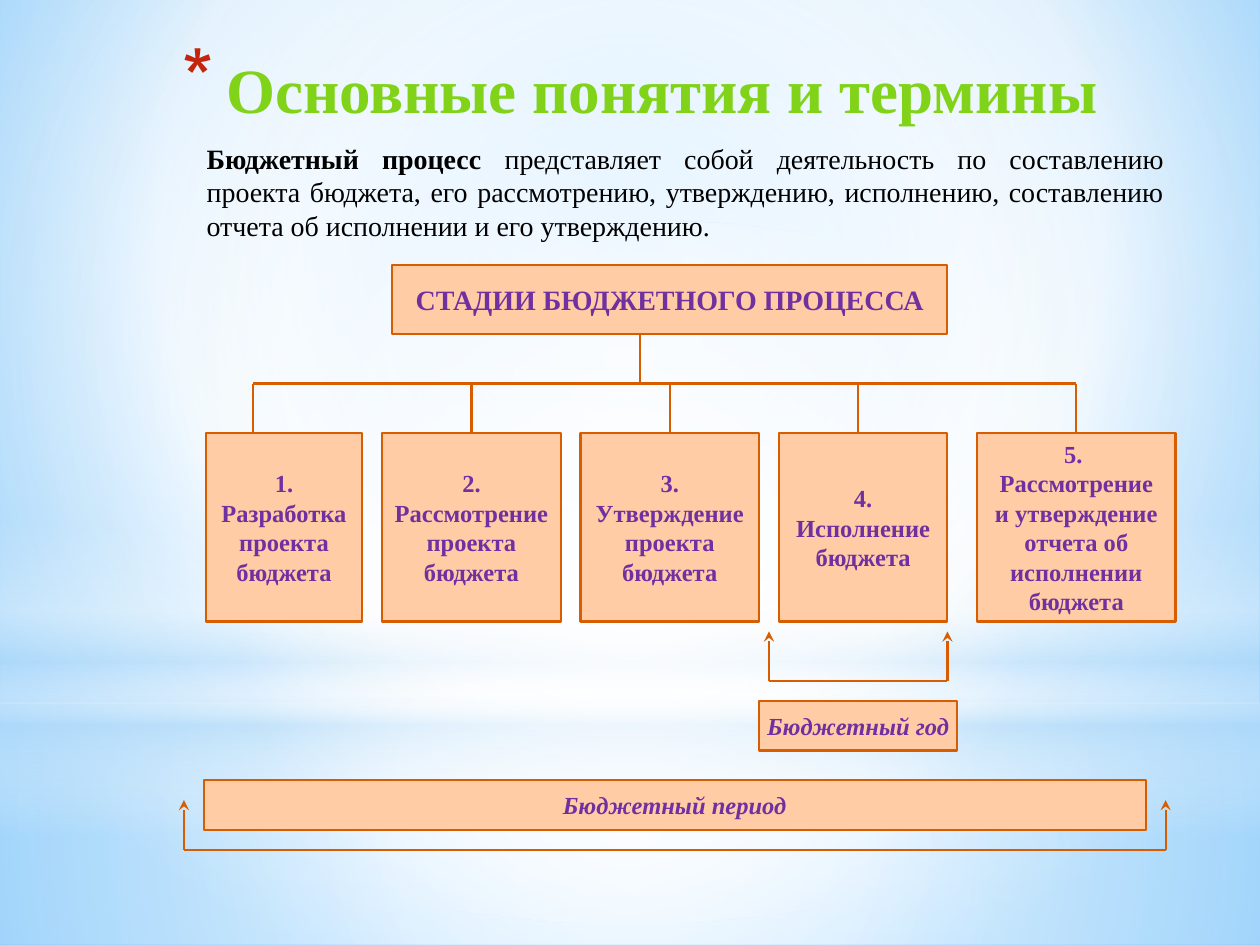
import pptx
import pptx.util
import pptx.dml.color
import pptx.enum.shapes
import pptx.enum.text
import pptx.oxml
import pptx.oxml.ns
from typing import NamedTuple

WIDE, HIGH = 10, 7.5
LEFT, TOP, CELL = 1.46, 2.1, 0.0787  # origin and step of the chart grid
FACE = "Times New Roman"
PEACH, RUST, PLUM, LIME, RED = "FFCCA6", "D85C00", "7030A0", "81D31A", "C3260C"
WHITE, SKY = "FFFFFF", "B4DCFA"
BUS = 12  # grid row of the line that joins the stages
ALIGN = pptx.enum.text.PP_ALIGN
ANCHOR = pptx.enum.text.MSO_ANCHOR
KIND = pptx.enum.shapes.MSO_SHAPE
qn = pptx.oxml.ns.qn


class Stage(NamedTuple):
    col: float
    span: float
    drop: float
    text: str


class Span(NamedTuple):
    """A labelled box and the bracket with two arrows beside it."""
    text: str
    col: float
    row: float
    span: float
    start: float
    end: float
    base: float


class Glow(NamedTuple):
    """A soft backdrop shape; top and height are shares of the slide."""
    kind: int
    top: float
    high: float
    stops: tuple
    mode: str


CIRCLE = '<a:path path="circle"><a:fillToRect l="{}" t="{}" r="{}" b="{}"/></a:path>'
MID = CIRCLE.format(*[50000] * 4)
DOWN = '<a:lin ang="5400000" scaled="0"/>'

GLOWS = [
    Glow(KIND.RECTANGLE, 0.744, 0.256,
         ((0, WHITE, 91), (37, WHITE, 76), (100, SKY, 79)), MID),
    Glow(KIND.RECTANGLE, 0, 0.744,
         ((0, WHITE, 89), (48, WHITE, 62), (100, SKY, 79)), MID),
    Glow(KIND.RECTANGLE, 0.55, 0.333,
         ((0, WHITE, 0), (29, WHITE, 30), (45, SKY, 40),
          (55, WHITE, 26), (65, SKY, 60), (100, WHITE, 0)), DOWN),
    Glow(KIND.OVAL, 0.233, 0.744, ((0, WHITE, 100), (56, WHITE, 0)), MID),
]
STAGES = [
    Stage(2.2, 15.8, 7, "1. Разработка проекта бюджета"),
    Stage(20, 18, 29, "2. Рассмотрение проекта бюджета"),
    Stage(40, 18, 49, "3. Утверждение проекта бюджета"),
    Stage(60, 17, 68, "4. Исполнение бюджета"),
    Stage(80, 20, 90, "5. \nРассмотрение и утверждение отчета об исполнении бюджета"),
]
SPANS = [
    Span("Бюджетный год", 58, 44, 20, 59, 77, 42),
    Span("Бюджетный период", 2, 52, 95, 0, 99, 59),
]


def paint(code: str) -> pptx.dml.color.RGBColor:
    return pptx.dml.color.RGBColor.from_string(code)


def node(tag: str, inner: str = "", **attrs: str):
    """Make a DrawingML element."""
    pairs = " ".join(f'{name}="{value}"' for name, value in attrs.items())
    return pptx.oxml.parse_xml(
        f'<a:{tag} {pptx.oxml.ns.nsdecls("a")} {pairs}>{inner}</a:{tag}>')


def blend(props, stops: tuple, mode: str) -> None:
    """Swap a solid fill for a gradient of (percent, colour, opacity) stops."""
    marks = "".join(
        f'<a:gs pos="{at * 1000}"><a:srgbClr val="{code}">'
        f'<a:alpha val="{seen * 1000}"/></a:srgbClr></a:gs>'
        for at, code, seen in stops)
    props.replace(props.find(qn("a:solidFill")),
                  node("gradFill", f"<a:gsLst>{marks}</a:gsLst>{mode}", rotWithShape="1"))


def back(slide) -> None:
    slide.background.fill.solid()
    blend(slide.element.find(".//" + qn("p:bgPr")),
          ((0, "9ED5FF", 100), (60, WHITE, 100), (100, "5BB9FF", 100)),
          CIRCLE.format(20000, 10000, 20000, 60000))


def glow(slide, part: Glow) -> None:
    shape = slide.shapes.add_shape(
        part.kind, 0, pptx.util.Inches(part.top * HIGH),
        pptx.util.Inches(WIDE), pptx.util.Inches(part.high * HIGH))
    shape.shadow.inherit = False
    shape.line.fill.background()
    shape.fill.solid()
    blend(shape.element.spPr, part.stops, part.mode)


def write(shape, text: str, *, size: float = 14, color: str = PLUM,
          bold: bool = True, slant: bool = False, align=ALIGN.CENTER,
          anchor=ANCHOR.MIDDLE, wrap: bool = True, lead: str = "") -> None:
    """Fill a shape with text; lead is a bold opening run."""
    frame = shape.text_frame
    frame.text = text
    frame.auto_size = pptx.enum.text.MSO_AUTO_SIZE.NONE
    frame.word_wrap = wrap
    frame.vertical_anchor = anchor
    if lead:
        first = frame.paragraphs[0]
        first.runs[0].text = lead
        first.add_run().text = text
    for para in frame.paragraphs:
        para.alignment = align
        para.space_before = pptx.util.Pt(0)
        for run in para.runs:
            font = run.font
            font.name, font.size = FACE, pptx.util.Pt(size)
            font.bold, font.italic = bold or run.text == lead, slant
            font.color.rgb = paint(color)


def mark(shape, dent: float, *bullet) -> None:
    """Set the hanging indent and the bullet of the first paragraph."""
    props = shape.text_frame.paragraphs[0]._p.get_or_add_pPr()
    gap = pptx.util.Inches(dent)
    props.set("marL", str(gap))
    props.set("indent", str(-gap))
    props.extend(bullet)


def place(shape, left: float, top: float, wide: float, high: float) -> None:
    """Move a placeholder, by shares of the slide, and bring it to the front."""
    shape.left, shape.width = (pptx.util.Inches(n * WIDE) for n in (left, wide))
    shape.top, shape.height = (pptx.util.Inches(n * HIGH) for n in (top, high))
    shape.element.getparent().append(shape.element)


def spot(col: float, row: float) -> tuple:
    return pptx.util.Inches(LEFT + col * CELL), pptx.util.Inches(TOP + row * CELL)


def box(slide, col: float, row: float, span: float, rows: float,
        text: str, **style) -> None:
    shape = slide.shapes.add_shape(
        KIND.RECTANGLE, *spot(col, row),
        pptx.util.Inches(span * CELL), pptx.util.Inches(rows * CELL))
    shape.shadow.inherit = False
    shape.fill.solid()
    shape.fill.fore_color.rgb = paint(PEACH)
    shape.line.color.rgb = paint(RUST)
    shape.line.width = pptx.util.Pt(1.25)
    write(shape, text, **style)


def wire(slide, start: tuple, end: tuple, arrow: bool = False) -> None:
    link = slide.shapes.add_connector(
        pptx.enum.shapes.MSO_CONNECTOR.STRAIGHT, *spot(*start), *spot(*end))
    link.line.color.rgb = paint(RUST)
    link.line.width = pptx.util.Pt(1.25)
    props = link.element.spPr
    if arrow:
        props.find(qn("a:ln")).append(node("tailEnd", type="stealth"))
    props.append(node("effectLst"))


def main() -> None:
    deck = pptx.Presentation()
    deck.slide_width = pptx.util.Inches(WIDE)
    deck.slide_height = pptx.util.Inches(HIGH)
    slide = deck.slides.add_slide(deck.slide_layouts[1])
    title, body = slide.placeholders
    back(slide)
    for part in GLOWS:
        glow(slide, part)

    place(body, 0.154, 0.143, 0.78, 0.105)
    write(body, "представляет собой деятельность по составлению проекта бюджета, "
          "его рассмотрению, утверждению, исполнению, составлению отчета "
          "об исполнении и его утверждению.", lead="Бюджетный процесс ",
          size=16, color="000000", bold=False, align=ALIGN.JUSTIFY, anchor=ANCHOR.TOP)
    mark(body, 0, node("buNone"))

    box(slide, 21, 0, 56, 7, "СТАДИИ БЮДЖЕТНОГО ПРОЦЕССА", size=16)
    wire(slide, (46, 7), (46, BUS))
    wire(slide, (STAGES[0].drop, BUS), (STAGES[-1].drop, BUS))
    for item in STAGES:
        box(slide, item.col, 17, item.span, 19, item.text)
        wire(slide, (item.drop, BUS), (item.drop, 17))
    for item in SPANS:
        wire(slide, (item.start, item.base), (item.end, item.base))
        for col in (item.start, item.end):
            wire(slide, (col, item.base), (col, item.base - 5), arrow=True)
        box(slide, item.col, item.row, item.span, 5, item.text, slant=True, wrap=False)

    place(title, 0.075, 0.034, 0.866, 0.119)
    write(title, "Основные понятия и термины", size=36, color=LIME)
    mark(title, 0.35, node("buClr", f'<a:srgbClr val="{RED}"/>'),
         node("buSzPct", val="128000"), node("buChar", char="*"))
    deck.save("out.pptx")


if __name__ == "__main__":
    main()
